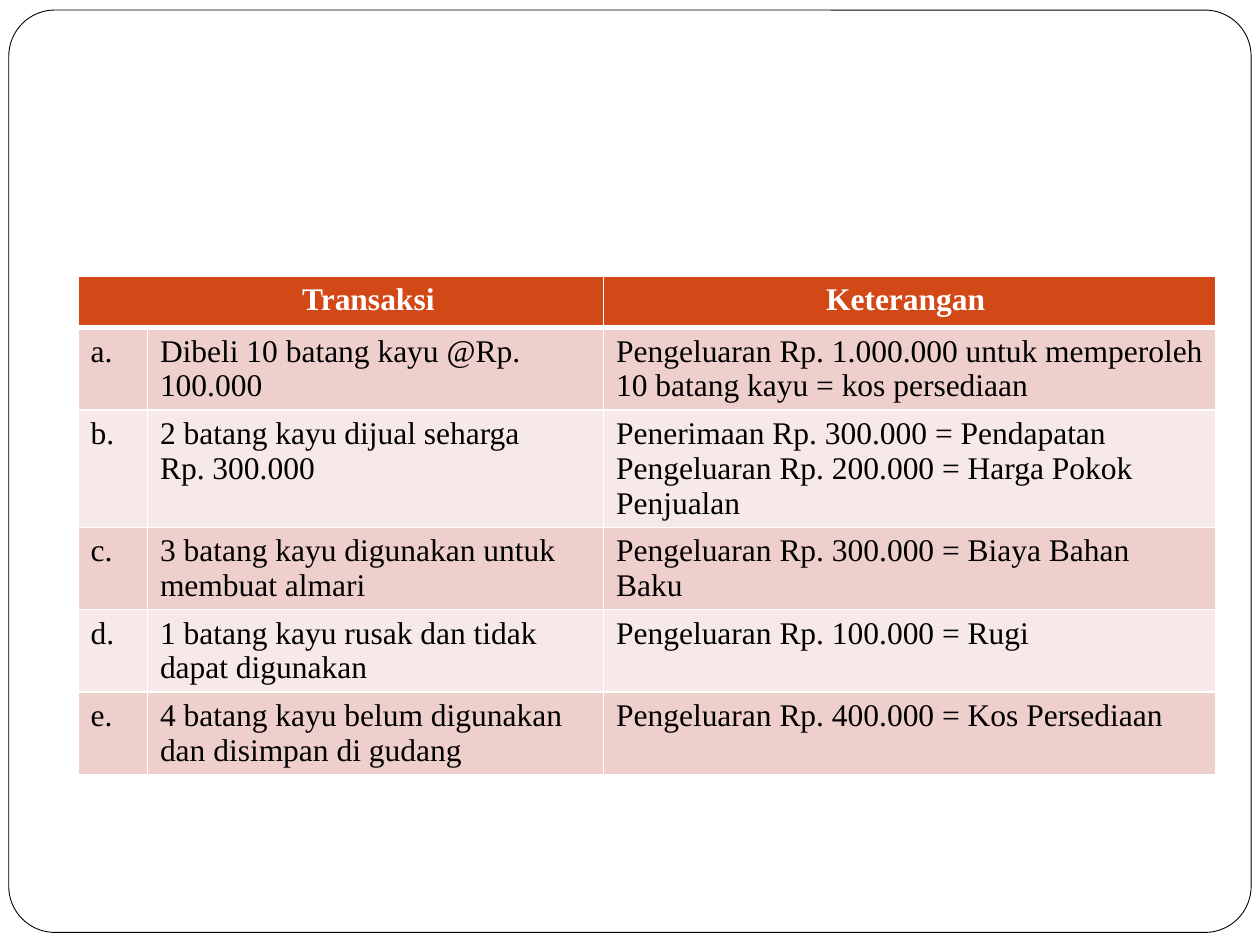
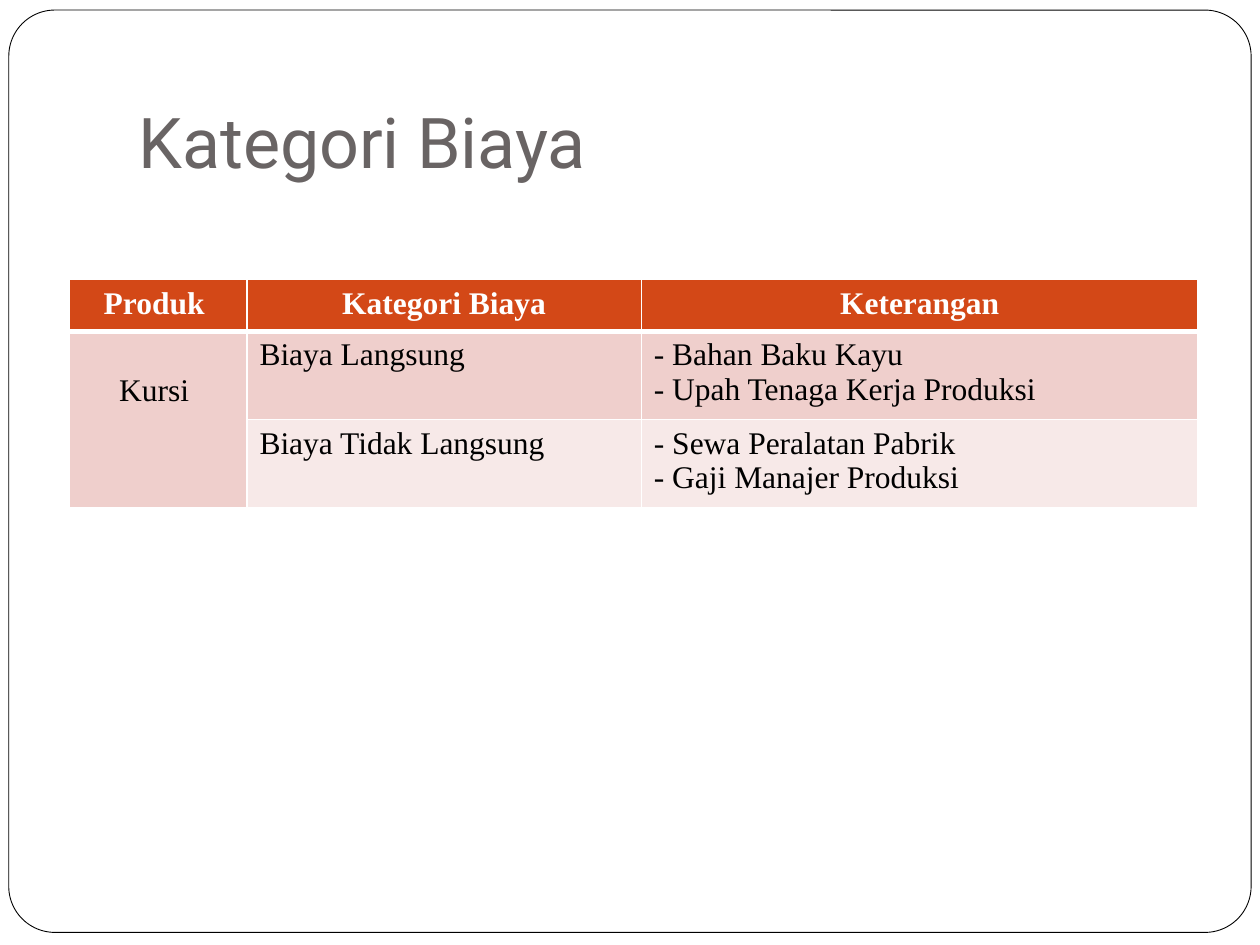
from lxml import etree
from pptx import Presentation
from pptx import util as u
from pptx.dml.color import RGBColor
from pptx.enum import shapes, text
from pptx.oxml.ns import qn

WHITE, BLACK, GREY = "FFFFFF", "000000", "696464"
HEAD, BANDS = "D34817", ("EFCFCC", "F7E9E8")
SERIF, SANS = "Times New Roman", "Roboto"


def color(code):
    return RGBColor.from_string(code)


def paint(obj, code):
    obj.fill.solid()
    obj.fill.fore_color.rgb = color(code)


def edge(cell, widths):
    """Draw white borders; widths maps L, R, T, B to points."""
    props = cell._tc.get_or_add_tcPr()
    for spot, (side, width) in enumerate(widths.items()):
        line = etree.Element(qn(f"a:ln{side}"), w=str(u.Pt(width)))
        fill = etree.SubElement(line, qn("a:solidFill"))
        etree.SubElement(fill, qn("a:srgbClr"), val=WHITE)
        props.insert(spot, line)


class Deck:
    """Holds the shared style and the current slide."""

    def __init__(self):
        self.prs = Presentation()
        self.prs.slide_width = u.Inches(10)
        self.prs.slide_height = u.Inches(7.5)

    def page(self):
        """Start a slide with its rounded frame."""
        self.slide = self.prs.slides.add_slide(self.prs.slide_layouts[6])
        frame = self.slide.shapes.add_shape(
            shapes.MSO_SHAPE.ROUNDED_RECTANGLE,
            *map(u.Inches, (0.07, 0.08, 9.86, 7.32)))
        frame.adjustments[0] = 0.05
        frame.shadow.inherit = False
        paint(frame, WHITE)
        frame.line.color.rgb = color(BLACK)
        frame.line.width = u.Pt(0.5)

    def label(self, frame, words, size, font, code, bold=False, align=None):
        frame.text = words
        for para in frame.paragraphs:
            para.alignment = align
            for run in para.runs:
                run.font.size = u.Pt(size)
                run.font.name = font
                run.font.bold = bold
                run.font.color.rgb = color(code)

    def title(self, words):
        box = self.slide.shapes.add_textbox(
            *map(u.Inches, (1, 0.3, 8.5, 1.25)))
        frame = box.text_frame
        frame.word_wrap = True
        frame.vertical_anchor = text.MSO_ANCHOR.BOTTOM
        frame.margin_bottom = u.Inches(0.1)
        self.label(frame, words, 40, SANS, GREY)

    def table(self, left, top, cols, highs, rows, span):
        """Add a banded table; span is the pair of corner cells to merge."""
        shape = self.slide.shapes.add_table(
            len(rows), len(cols),
            *map(u.Inches, (left, top, sum(cols), sum(highs))))
        grid = shape.table
        grid.horz_banding = False
        for col, width in zip(grid.columns, cols):
            col.width = u.Inches(width)
        for row, high in zip(grid.rows, highs):
            row.height = u.Inches(high)
        for r, row in enumerate(rows):
            for c, words in enumerate(row):
                self.cell(grid.cell(r, c), r, words)
        first, last = span
        grid.cell(*first).merge(grid.cell(*last))
        return grid

    def cell(self, cell, r, words):
        head = r == 0
        paint(cell, HEAD if head else BANDS[(r - 1) % 2])
        edge(cell, {"L": 1, "R": 1, "T": 3 if r == 1 else 1,
                    "B": 3 if head else 1})
        if words:
            self.label(cell.text_frame, words, 18, SERIF,
                       WHITE if head else BLACK, head,
                       text.PP_ALIGN.CENTER if head else None)


def deals(deck):
    deck.page()
    rows = [
        ("Transaksi ", None, "Keterangan "),
        ("a.", "Dibeli 10 batang kayu @Rp. 100.000",
         "Pengeluaran Rp. 1.000.000 untuk memperoleh "
         "10 batang kayu = kos persediaan"),
        ("b.", "2 batang kayu dijual seharga\nRp. 300.000",
         "Penerimaan Rp. 300.000 = Pendapatan\n"
         "Pengeluaran Rp. 200.000 = Harga Pokok Penjualan"),
        ("c.", "3 batang kayu digunakan untuk membuat almari",
         "Pengeluaran Rp. 300.000 = Biaya Bahan Baku"),
        ("d.", "1 batang kayu rusak dan tidak dapat digunakan",
         "Pengeluaran Rp. 100.000 = Rugi"),
        ("e.", "4 batang kayu belum digunakan dan disimpan di gudang",
         "Pengeluaran Rp. 400.000 = Kos Persediaan"),
    ]
    grid = deck.table(0.62, 2.19, (0.55, 3.62, 4.86),
                      (0.41, 0.65, 0.93, 0.65, 0.65, 0.65),
                      rows, ((0, 0), (0, 1)))
    grid.cell(0, 0).margin_left = u.Inches(0.6)


def costs(deck):
    deck.page()
    deck.title("Kategori Biaya")
    rows = [
        ("Produk ", "Kategori Biaya", "Keterangan"),
        ("Kursi ", "Biaya Langsung",
         "- Bahan Baku Kayu\n- Upah Tenaga Kerja Produksi"),
        (None, "Biaya Tidak Langsung",
         "- Sewa Peralatan Pabrik\n- Gaji Manajer Produksi"),
    ]
    grid = deck.table(0.55, 2.22, (1.41, 3.13, 4.42), (0.41, 0.65, 0.65),
                      rows, ((1, 0), (2, 0)))
    item = grid.cell(1, 0)
    item.margin_top = u.Inches(0.33)
    item.text_frame.paragraphs[0].alignment = text.PP_ALIGN.CENTER


def main():
    deck = Deck()
    deals(deck)
    costs(deck)
    deck.prs.save("out.pptx")


if __name__ == "__main__":
    main()
